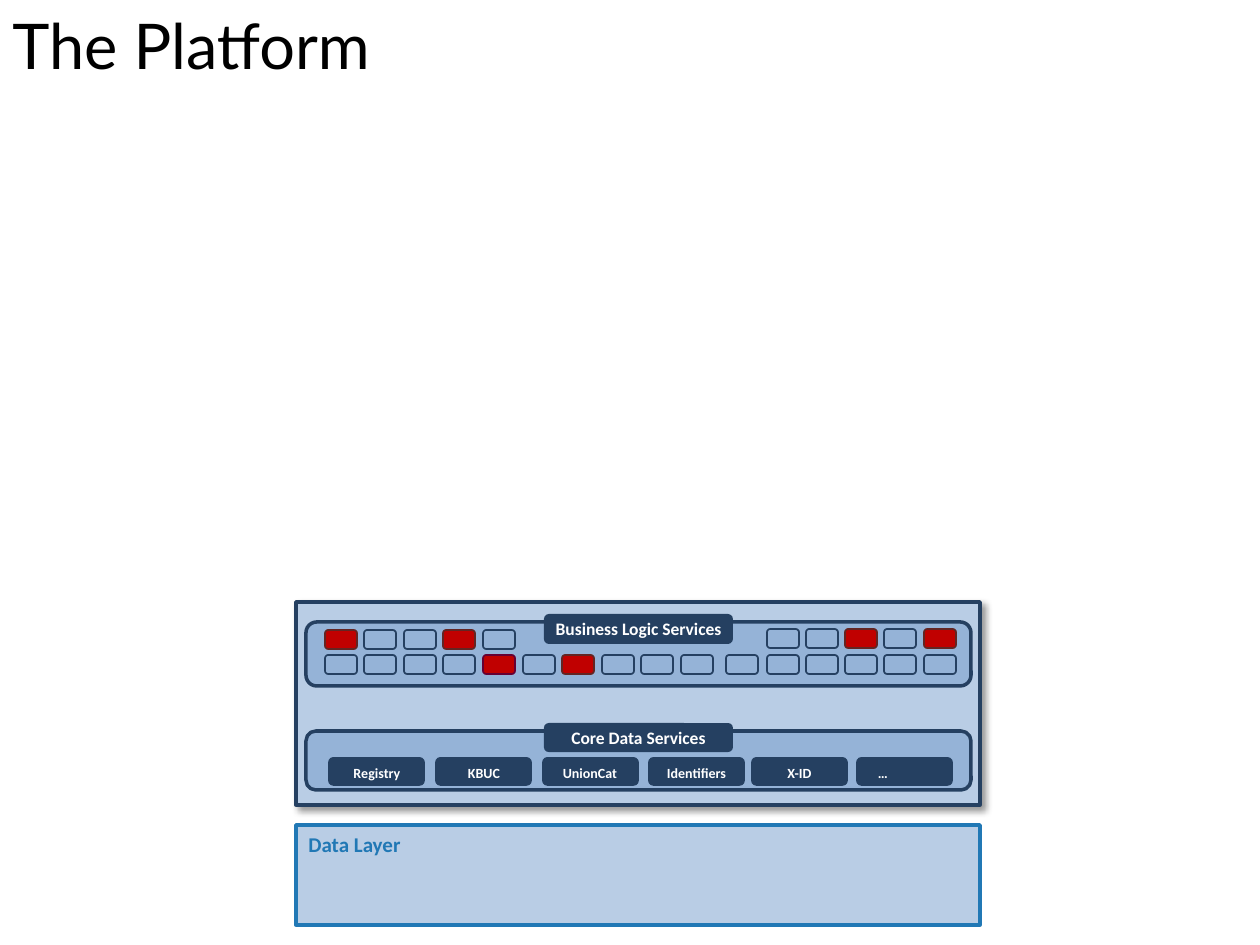
from lxml import etree
from pptx import Presentation
from pptx import util as u
from pptx.dml.color import RGBColor
from pptx.enum import shapes, text
from pptx.oxml.ns import qn

PX = u.Inches(1) / 126
C = {
    "black": "000000", "white": "FFFFFF", "navy": "254061", "blue": "2178B5",
    "pale": "B9CDE5", "mid": "95B3D7", "red": "C00000", "maroon": "632523",
    "plum": "660033",
}
RECT = shapes.MSO_SHAPE.RECTANGLE
ROUND = shapes.MSO_SHAPE.ROUNDED_RECTANGLE


def px(*values):
    return [u.Emu(round(v * PX)) for v in values]


def rgb(name):
    return RGBColor.from_string(C[name])


def add_box(s, kind, box, fill, line=None, weight=1):
    sp = s.shapes.add_shape(kind, *px(*box))
    sp.shadow.inherit = False
    sp.fill.solid()
    sp.fill.fore_color.rgb = rgb(fill)
    if line:
        sp.line.color.rgb = rgb(line)
        sp.line.width = u.Pt(weight)
    else:
        sp.line.fill.background()
    return sp


def write(sp, words, size, color, font="Calibri", bold=True, align="LEFT",
          anchor="TOP", wrap=True, side=None):
    tf = sp.text_frame
    tf.word_wrap = wrap
    tf.vertical_anchor = text.MSO_ANCHOR[anchor]
    if side is not None:
        tf.margin_left = tf.margin_right = side
    p = tf.paragraphs[0]
    p.alignment = text.PP_ALIGN[align]
    r = p.add_run()
    r.text = words
    r.font.name = font
    r.font.size = u.Pt(size)
    r.font.bold = bold
    r.font.color.rgb = rgb(color)


def add_shadow(sp):
    effects = sp._element.spPr.find(qn("a:effectLst"))
    shadow = etree.SubElement(
        effects, qn("a:outerShdw"), blurRad=str(u.Pt(4)), dist=str(u.Pt(3)),
        dir="2700000", algn="tl", rotWithShape="0")
    color = etree.SubElement(shadow, qn("a:srgbClr"), val=C["black"])
    etree.SubElement(color, qn("a:alpha"), val="40000")


def add_title(s, box):
    write(s.shapes.add_textbox(*px(*box)), "The Platform", 36, "black",
          font="Lato", bold=False, wrap=False)


def add_panel(s, box, heading, rise, tab_height, side=None):
    x, y, w, h = box
    add_box(s, ROUND, box, "mid", "navy", 2)
    tab = add_box(s, ROUND, (x + 238, y - rise, 189, tab_height), "navy")
    write(tab, heading, 10, "white", align="CENTER", anchor="MIDDLE", side=side)


def add_business_logic(s, box):
    x, y, w, h = box
    add_panel(s, box, "Business Logic Services", 8, 30, side=0)
    left = [19 + i * 198 // 5 for i in range(10)]
    right = [461 + i * 157 // 4 for i in range(5)]
    rows = (
        (8, left[:5], {0: "maroon", 3: "maroon"}),
        (7, right, {2: "maroon", 4: "maroon"}),
        (33, left + [420] + right, {4: "plum", 6: "maroon"}),
    )
    for dy, columns, marked in rows:
        for i, dx in enumerate(columns):
            add_box(s, ROUND, (x + dx, y + dy, 32, 19),
                    "red" if i in marked else "mid", marked.get(i, "navy"))


def add_core_data(s, box):
    x, y, w, h = box
    add_panel(s, box, "Core Data Services", 8, 29)
    services = (("Registry", 23, 96), ("KBUC", 130, 96), ("UnionCat", 237, 94),
                ("Identifiers", 343, 95), ("X-ID", 446, 95), ("…", 551, 52))
    for name, dx, label_width in services:
        add_box(s, ROUND, (x + dx, y + 27, 95, 27), "navy", "navy")
        label = s.shapes.add_textbox(*px(x + dx, y + 27, label_width, 30))
        write(label, name, 8, "white", align="CENTER")


def add_services(s, box):
    x, y, w, h = box
    add_shadow(add_box(s, RECT, box, "pale", "navy", 2))
    add_business_logic(s, (x + 10, y + 20, w - 19, 64))
    add_core_data(s, (x + 10, y + 129, w - 19, 59))


def add_data_layer(s, box):
    x, y, w, h = box
    add_box(s, RECT, box, "pale", "blue", 2)
    write(s.shapes.add_textbox(*px(x, y, 118, 38)), "Data Layer", 12, "blue",
          wrap=False)


def main():
    prs = Presentation()
    prs.slide_width, prs.slide_height = px(1260, 945)
    s = prs.slides.add_slide(prs.slide_layouts[6])
    s.background.fill.solid()
    s.background.fill.fore_color.rgb = rgb("white")
    add_title(s, (0, 0, 399, 89))
    add_services(s, (296, 602, 684, 203))
    add_data_layer(s, (296, 825, 684, 100))
    prs.save("out.pptx")


if __name__ == "__main__":
    main()
